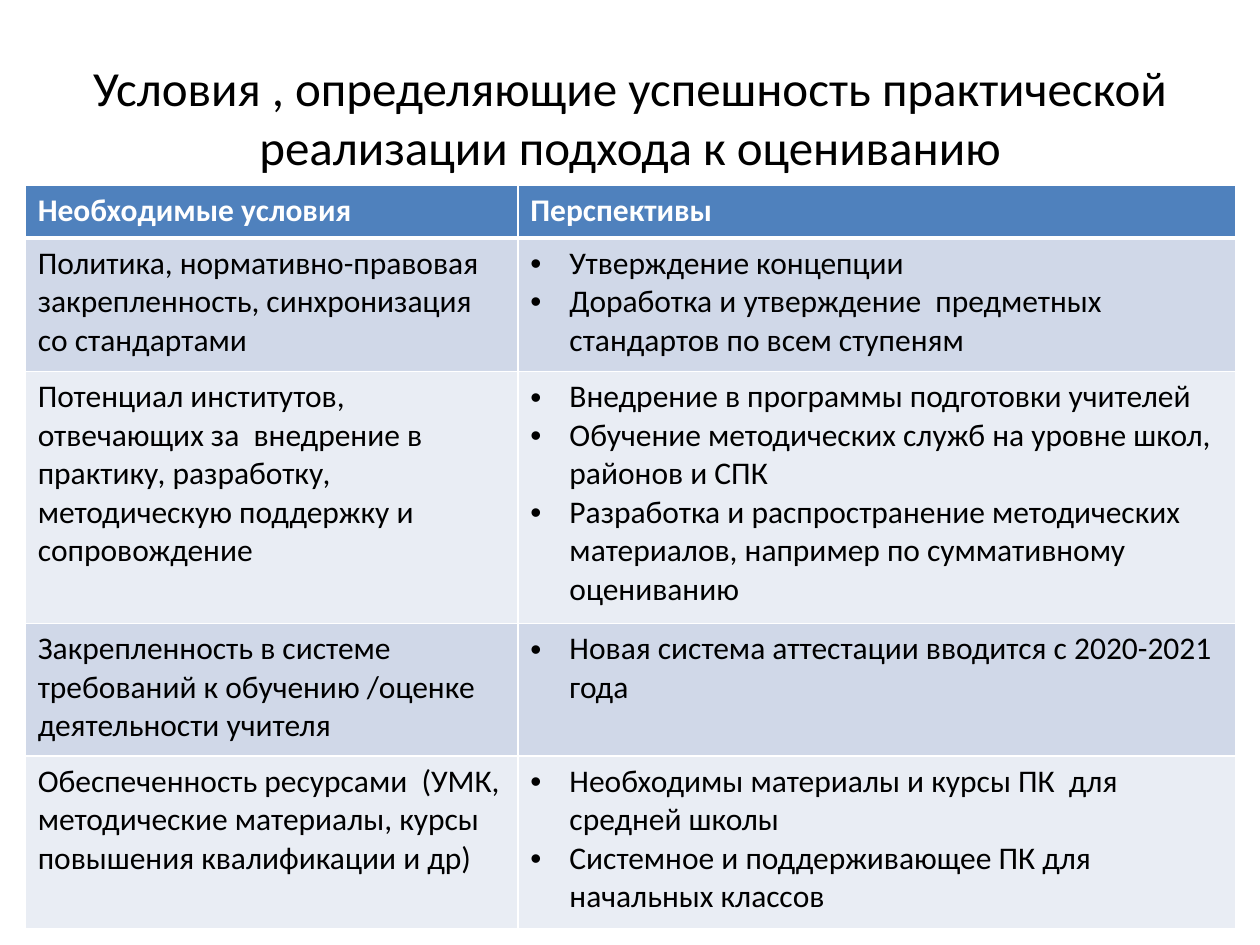
from dataclasses import dataclass

from lxml import etree
from pptx import Presentation
from pptx.dml.color import RGBColor
from pptx.enum import text
from pptx.oxml.ns import qn
from pptx.util import Inches, Pt


@dataclass(frozen=True)
class Theme:
    font: str = "Calibri"
    title_size: int = 28
    body_size: int = 18
    ink: str = "000000"
    white: str = "FFFFFF"
    header: str = "4F81BD"
    bands: tuple[str, str] = ("D0D8E8", "E9EDF4")
    rule: float = 1
    header_rule: float = 3
    indent: float = 0.31


@dataclass(frozen=True)
class Row:
    height: float
    condition: str
    prospects: tuple[str, ...]


THEME = Theme()
COLUMNS = (3.91, 5.7)
HEADER = Row(0.42, "Необходимые условия", ("Перспективы",))
ROWS = (
    Row(1.06, "Политика, нормативно-правовая закрепленность, синхронизация со стандартами",
        ("Утверждение концепции",
         "Доработка и утверждение  предметных стандартов по всем ступеням")),
    Row(2, "Потенциал институтов, отвечающих за  внедрение в практику, разработку, "
        "методическую поддержку и сопровождение",
        ("Внедрение в программы подготовки учителей",
         "Обучение методических служб на уровне школ, районов и СПК",
         "Разработка и распространение методических материалов, "
         "например по суммативному оцениванию")),
    Row(1.05, "Закрепленность в системе требований к обучению /оценке деятельности учителя",
        ("Новая система аттестации вводится с 2020-2021 года",)),
    Row(1.37, "Обеспеченность ресурсами  (УМК, методические материалы, "
        "курсы повышения квалификации и др)",
        ("Необходимы материалы и курсы ПК  для средней школы",
         "Системное и поддерживающее ПК для начальных классов")),
)


def style_runs(p, size: float, color: str, bold: bool = False) -> None:
    for r in p.runs:
        r.font.name = THEME.font
        r.font.size = Pt(size)
        r.font.bold = bold
        r.font.color.rgb = RGBColor.from_string(color)


def add_bullet(p) -> None:
    pPr = p._p.get_or_add_pPr()
    indent = Inches(THEME.indent)
    pPr.set("marL", str(indent))
    pPr.set("indent", str(-indent))
    etree.SubElement(pPr, qn("a:buFont"), typeface="Arial")
    etree.SubElement(pPr, qn("a:buChar"), char="•")


def set_borders(cell, top: float, bottom: float) -> None:
    tcPr = cell._tc.get_or_add_tcPr()
    widths = {"lnL": THEME.rule, "lnR": THEME.rule, "lnT": top, "lnB": bottom}
    for side, width in widths.items():
        ln = etree.SubElement(tcPr, qn(f"a:{side}"), w=str(Pt(width)))
        fill = etree.SubElement(ln, qn("a:solidFill"))
        etree.SubElement(fill, qn("a:srgbClr"), val=THEME.white)


def fill_cell(cell, lines: tuple[str, ...], index: int, bulleted: bool) -> None:
    is_header = index == 0
    # Borders come before the fill in the cell properties
    set_borders(cell,
                top=THEME.header_rule if index == 1 else THEME.rule,
                bottom=THEME.header_rule if is_header else THEME.rule)
    background = THEME.header if is_header else THEME.bands[(index - 1) % 2]
    cell.fill.solid()
    cell.fill.fore_color.rgb = RGBColor.from_string(background)

    tf = cell.text_frame
    tf.text = "\n".join(lines)
    for p in tf.paragraphs:
        style_runs(p, THEME.body_size, THEME.white if is_header else THEME.ink, is_header)
        if bulleted:
            add_bullet(p)


def add_title(slide, title: str) -> None:
    sp = slide.shapes.add_textbox(Inches(0.5), Inches(0.3), Inches(9), Inches(1.25))
    tf = sp.text_frame
    tf.word_wrap = True
    tf.vertical_anchor = text.MSO_ANCHOR.MIDDLE
    tf.text = title
    p = tf.paragraphs[0]
    p.alignment = text.PP_ALIGN.CENTER
    style_runs(p, THEME.title_size, THEME.ink)


def add_conditions_table(slide, rows: tuple[Row, ...]) -> None:
    height = sum(row.height for row in rows)
    table = slide.shapes.add_table(len(rows), len(COLUMNS), Inches(0.2), Inches(1.47),
                                   Inches(sum(COLUMNS)), Inches(height)).table
    for column, width in zip(table.columns, COLUMNS):
        column.width = Inches(width)
    for i, row in enumerate(rows):
        table.rows[i].height = Inches(row.height)
        fill_cell(table.cell(i, 0), (row.condition,), i, bulleted=False)
        fill_cell(table.cell(i, 1), row.prospects, i, bulleted=i > 0)


def main() -> None:
    prs = Presentation()
    prs.slide_width, prs.slide_height = Inches(10), Inches(7.5)
    slide = prs.slides.add_slide(prs.slide_layouts[6])

    # Title
    add_title(slide, "Условия , определяющие успешность практической "
                     "реализации подхода к оцениванию")
    # Conditions and prospects
    add_conditions_table(slide, (HEADER, *ROWS))

    prs.save("out.pptx")


if __name__ == "__main__":
    main()
